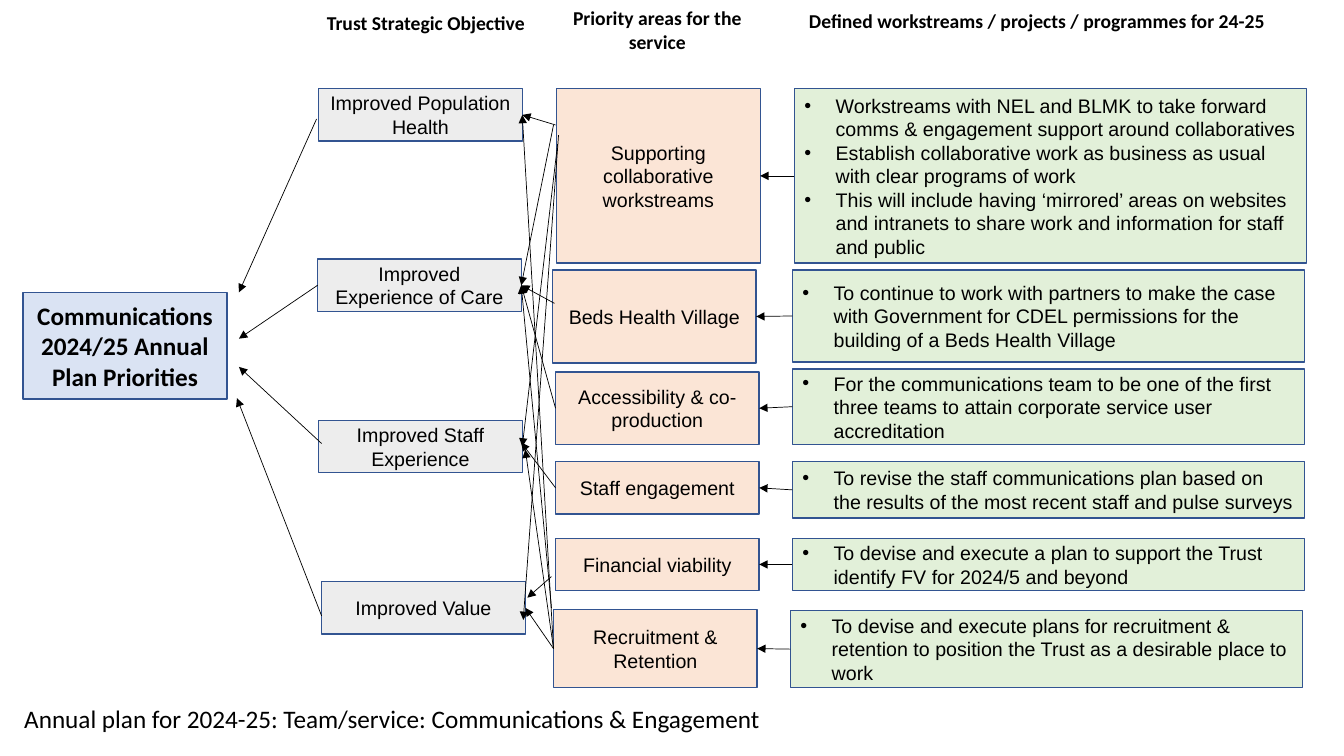
from lxml import etree
from pptx import Presentation
from pptx.dml.color import RGBColor
from pptx.enum.shapes import MSO_CONNECTOR, MSO_SHAPE
from pptx.enum.text import MSO_ANCHOR, MSO_AUTO_SIZE, PP_ALIGN
from pptx.oxml.ns import qn
from pptx.util import Inches, Pt

RECTANGLE = MSO_SHAPE.RECTANGLE
STRAIGHT = MSO_CONNECTOR.STRAIGHT
TOP, MIDDLE = MSO_ANCHOR.TOP, MSO_ANCHOR.MIDDLE
LEFT, CENTER = PP_ALIGN.LEFT, PP_ALIGN.CENTER
FIT_SHAPE, NO_FIT = MSO_AUTO_SIZE.SHAPE_TO_FIT_TEXT, MSO_AUTO_SIZE.NONE
LEFT_SIDE, RIGHT_SIDE = 1, 3

BOX_WIDTH = 20.2
WORKSTREAM_WIDTH = 50.8


def color(value):
    return RGBColor.from_string(value)


def cells(count):
    """Length of a number of grid cells, each a tenth of an inch."""
    return Inches(count / 10)


def write(frame, *texts, font="Arial", size=14, bold=False, align=CENTER,
          anchor=MIDDLE, bullets=False, fit=NO_FIT):
    """Fill a text frame with one paragraph per text."""
    frame.word_wrap = True
    frame.auto_size = fit
    frame.vertical_anchor = anchor
    for index, text in enumerate(texts):
        paragraph = frame.paragraphs[0] if index == 0 else frame.add_paragraph()
        paragraph.alignment = align
        paragraph.line_spacing = 1.0
        if bullets:
            properties = paragraph._p.get_or_add_pPr()
            properties.set("marL", str(Inches(0.31)))
            properties.set("indent", str(Inches(-0.31)))
            bullet_font = etree.SubElement(properties, qn("a:buFont"))
            bullet_font.set("typeface", "Arial")
            etree.SubElement(properties, qn("a:buChar")).set("char", "•")
        run = paragraph.add_run()
        run.text = text
        run.font.name = font
        run.font.size = Pt(size)
        run.font.bold = bold
        run.font.color.rgb = color("000000")


class PlanSlide:
    """Places elements on a grid of tenth-inch columns and rows."""

    outline = "325491"
    arrow_color = "000000"

    def __init__(self, presentation):
        self.slide = presentation.slides.add_slide(presentation.slide_layouts[5])
        self.shapes = self.slide.shapes

    def title(self, text, column, row, width, height):
        title = self.shapes.title
        title.left, title.top = cells(column), cells(row)
        title.width, title.height = cells(width), cells(height)
        write(title.text_frame, text, font="Calibri", size=18, align=LEFT, anchor=TOP)

    def heading(self, text, column, row, width, height):
        heading = self.shapes.add_textbox(*map(cells, (column, row, width, height)))
        write(heading.text_frame, text, font="Calibri", bold=True, anchor=TOP,
              fit=FIT_SHAPE)

    def box(self, texts, fill, column, row, height, width=BOX_WIDTH, **text_format):
        box = self.shapes.add_shape(RECTANGLE, *map(cells, (column, row, width, height)))
        box.shadow.inherit = False
        box.fill.solid()
        box.fill.fore_color.rgb = color(fill)
        box.line.color.rgb = color(self.outline)
        box.line.width = Pt(1)
        write(box.text_frame, *texts, **text_format)
        return box

    def arrow(self, start, end):
        """Point from a box's left side to a box's right side; either may be a grid point."""
        start_point = start if isinstance(start, tuple) else (0, 0)
        end_point = end if isinstance(end, tuple) else (0, 0)
        arrow = self.shapes.add_connector(STRAIGHT, *map(cells, start_point + end_point))
        if start is not start_point:
            arrow.begin_connect(start, LEFT_SIDE)
        if end is not end_point:
            arrow.end_connect(end, RIGHT_SIDE)
        arrow.line.color.rgb = color(self.arrow_color)
        arrow.line.width = Pt(0.5)
        etree.SubElement(arrow.line._get_or_add_ln(), qn("a:tailEnd")).set("type", "triangle")
        etree.SubElement(arrow._element.spPr, qn("a:effectLst"))


HEADINGS = [
    ("Trust Strategic Objective", 30.1, 0.6, 24.3, 3.4),
    ("Priority areas for the service", 55.1, 0.1, 20.2, 5.7),
    ("Defined workstreams / projects / programmes for 24-25", 77.9, 0.4, 49.9, 3.4),
]

# Text, column, row
OBJECTIVES = [
    ("Improved Population Health", 31.6, 8.8),
    ("Improved Experience of Care", 31.5, 25.7),
    ("Improved Staff Experience", 31.6, 41.7),
    ("Improved Value", 31.9, 57.7),
]

# Priority (text, column, row, height), then workstreams (texts, column, row, height)
PRIORITIES = [
    (("Supporting collaborative workstreams", 55.2, 8.8, 17.3),
     (["Workstreams with NEL and BLMK to take forward comms & engagement support "
       "around collaboratives",
       "Establish collaborative work as business as usual with clear programs of work",
       "This will include having ‘mirrored’ areas on websites and intranets to share "
       "work and information for staff and public"], 78.8, 8.8, 17.3)),
    (("Beds Health Village", 54.8, 26.8, 9.2),
     (["To continue to work with partners to make the case with Government for CDEL "
       "permissions for the building of a Beds Health Village"], 78.6, 26.8, 9.1)),
    (("Accessibility & co-production", 55.1, 36.9, 7.2),
     (["For the communications team to be one of the first three teams to attain "
       "corporate service user accreditation"], 78.6, 36.6, 7.5)),
    (("Staff engagement", 55.1, 45.8, 5.2),
     (["To revise the staff communications plan based on the results of the most "
       "recent staff and pulse surveys"], 78.6, 45.8, 5.6)),
    (("Financial viability", 55.1, 53.4, 5.2),
     (["To devise and execute a plan to support the Trust identify FV for 2024/5 "
       "and beyond"], 78.6, 53.4, 5.2)),
    (("Recruitment & Retention", 54.9, 60.5, 7.7),
     (["To devise and execute plans for recruitment & retention to position the "
       "Trust as a desirable place to work"], 78.4, 60.6, 7.6)),
]


def main():
    presentation = Presentation()
    presentation.slide_width, presentation.slide_height = Inches(13.33), Inches(7.5)
    plan = PlanSlide(presentation)

    plan.title("Annual plan for 2024-25: Team/service: Communications & Engagement",
               1.4, 69.3, 84.7, 4)
    for heading in HEADINGS:
        plan.heading(*heading)

    plan.box(["Communications", "2024/25 Annual Plan Priorities"], "DAE3F3",
             2.3, 29, 10.6, font="Calibri", size=18, bold=True)
    population, care, staff, value = [
        plan.box([text], "EDEDED", column, row, 5.2) for text, column, row in OBJECTIVES]

    priority_boxes = []
    for (priority, *priority_place), (workstreams, *workstream_place) in PRIORITIES:
        priority_box = plan.box([priority], "FBE5D6", *priority_place)
        workstream_box = plan.box(workstreams, "E2F0D9", *workstream_place,
                                  width=WORKSTREAM_WIDTH, align=LEFT, bullets=True)
        plan.arrow(workstream_box, priority_box)
        priority_boxes.append(priority_box)
    _, _, accessibility, engagement, _, recruitment = priority_boxes

    objective_to_plan = [
        ((31.4, 11.8), (23.7, 29)),
        (care, (23.7, 33.6)),
        ((31.9, 44), (23.7, 36.4)),
        ((31.9, 61.1), (23.5, 39.5)),
    ]
    priority_to_objective = [
        ((55.1, 12.4), population),
        ((54.9, 12.4), care),
        ((55.3, 14.3), staff),
        ((55.4, 13.4), (51.9, 61.5)),
        ((55, 30.1), care),
        (accessibility, care),
        (engagement, (51.7, 43.9)),
        ((54.7, 57.2), (52.3, 59.3)),
        (recruitment, population),
        ((54.7, 60.3), care),
        (recruitment, (52.1, 44.6)),
        (recruitment, value),
    ]
    for start, end in objective_to_plan + priority_to_objective:
        plan.arrow(start, end)

    presentation.save("out.pptx")


if __name__ == "__main__":
    main()
